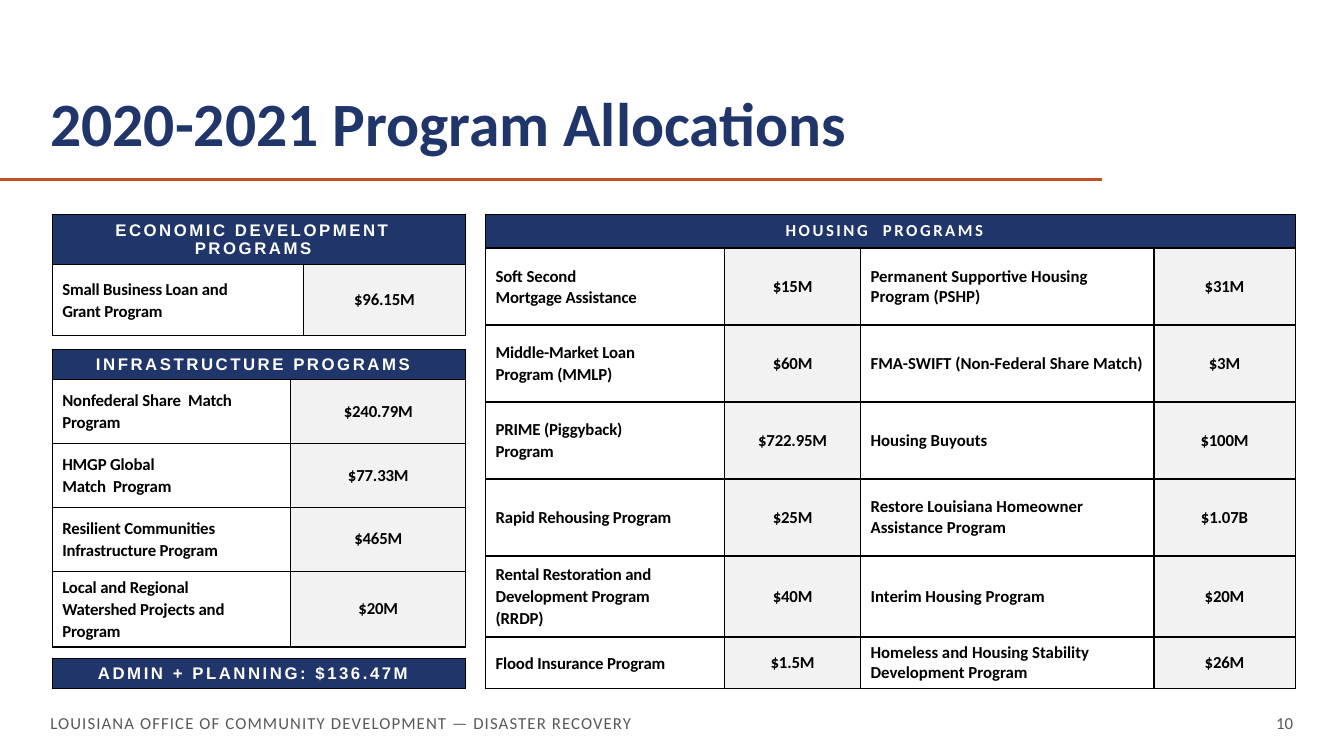
from copy import deepcopy

from lxml import etree
from pptx import Presentation
from pptx.dml.color import RGBColor
from pptx.enum.shapes import MSO_CONNECTOR
from pptx.enum.text import MSO_ANCHOR, PP_ALIGN
from pptx.oxml import parse_xml
from pptx.oxml.ns import nsdecls, qn
from pptx.util import Cm, Pt

NAVY = RGBColor(0x20, 0x35, 0x69)
RUST = RGBColor(0xC4, 0x4F, 0x27)
GRAY = RGBColor(0x59, 0x59, 0x59)
LIGHT_GRAY = RGBColor(0xF2, 0xF2, 0xF2)
WHITE = RGBColor(0xFF, 0xFF, 0xFF)
BLACK = RGBColor(0x00, 0x00, 0x00)
LEFT, CENTER, RIGHT = PP_ALIGN.LEFT, PP_ALIGN.CENTER, PP_ALIGN.RIGHT
MIDDLE, BOTTOM = MSO_ANCHOR.MIDDLE, MSO_ANCHOR.BOTTOM


def add_text(paragraph, text, size, color, bold, align, spacing=0, font_name="Calibri"):
    """Fill a paragraph line by line; spacing is in hundredths of a point."""
    paragraph.alignment = align
    for index, line in enumerate(text.split("\n")):
        if index:
            paragraph.add_line_break()
        run = paragraph.add_run()
        run.text = line
        run.font.name = font_name
        run.font.size = Pt(size)
        run.font.bold = bold
        run.font.color.rgb = color
        run.font._element.set("spc", str(spacing))
    for line_break in paragraph._p.findall(qn("a:br")):
        line_break.append(deepcopy(run.font._element))


def style_cell(cell, fill, margin_right):
    """Give a cell its fill, margins and thin black borders."""
    cell.fill.solid()
    cell.fill.fore_color.rgb = fill
    cell.vertical_anchor = MIDDLE
    cell.margin_left = Cm(0.25)
    cell.margin_right = Cm(margin_right)
    properties = cell._tc.get_or_add_tcPr()
    for index, side in enumerate(("lnL", "lnR", "lnT", "lnB")):
        border = parse_xml(
            f'<a:{side} {nsdecls("a")} w="12700"><a:solidFill>'
            f'<a:srgbClr val="{BLACK}"/></a:solidFill></a:{side}>'
        )
        properties.insert(index, border)


presentation = Presentation()
presentation.slide_width = Cm(33.87)
presentation.slide_height = Cm(19.05)
slide = presentation.slides.add_slide(presentation.slide_layouts[6])

title_rule = slide.shapes.add_connector(
    MSO_CONNECTOR.STRAIGHT, Cm(0), Cm(4.53), Cm(27.76), Cm(4.53)
)
title_rule.line.color.rgb = RUST
title_rule.line.width = Pt(2.25)
etree.SubElement(title_rule._element.spPr, qn("a:effectLst"))

# text, left, top, width, height, size, colour, bold, align, anchor, spacing
text_boxes = [
    ("2020-2021 Program Allocations", 1.27, 1.12, 26.49, 2.92,
     44, NAVY, True, LEFT, BOTTOM, 0),
    ("LOUISIANA OFFICE OF COMMUNITY DEVELOPMENT — DISASTER RECOVERY",
     1.27, 17.78, 16.94, 0.89, 12, GRAY, False, LEFT, MIDDLE, 80),
    ("10", 24.97, 17.78, 7.62, 0.89, 12, GRAY, False, RIGHT, MIDDLE, 0),
]
for text, left, top, width, height, size, color, bold, align, anchor, spacing in text_boxes:
    box = slide.shapes.add_textbox(Cm(left), Cm(top), Cm(width), Cm(height))
    frame = box.text_frame
    frame.word_wrap = True
    frame.vertical_anchor = anchor
    frame.margin_left = frame.margin_right = frame.margin_top = frame.margin_bottom = 0
    add_text(frame.paragraphs[0], text, size, color, bold, align, spacing)
    if size == 44:
        frame.paragraphs[0].line_spacing = 0.9

housing_rows = [
    ("Soft Second \nMortgage Assistance", "$15M",
     "Permanent Supportive Housing Program (PSHP)", "$31M"),
    ("Middle-Market Loan Program (MMLP)", "$60M",
     "FMA-SWIFT (Non-Federal Share Match)", "$3M"),
    ("PRIME (Piggyback) Program", "$722.95M", "Housing Buyouts", "$100M"),
    ("Rapid Rehousing Program", "$25M",
     "Restore Louisiana Homeowner Assistance Program", "$1.07B"),
    ("Rental Restoration and Development Program (RRDP)", "$40M",
     "Interim Housing Program", "$20M"),
    ("Flood Insurance Program", "$1.5M",
     "Homeless and Housing Stability Development Program", "$26M"),
]
infrastructure_rows = [
    ("Nonfederal Share  Match Program", "$240.79M"),
    ("HMGP Global \nMatch  Program", "$77.33M"),
    ("Resilient Communities Infrastructure Program", "$465M"),
    ("Local and Regional Watershed Projects and Program", "$20M"),
]
economic_rows = [("Small Business Loan and Grant Program", "$96.15M")]

# heading, heading font, left, top, column widths, row heights, rows
tables = [
    ("HOUSING  PROGRAMS", "Calibri", 12.24, 5.4, (6.02, 3.43, 7.39, 3.56),
     (0.85, 1.94, 1.94, 1.94, 1.94, 2.04, 1.3), housing_rows),
    ("INFRASTRUCTURE PROGRAMS", "Arial", 1.32, 8.8, (6.01, 4.41),
     (0.76, 1.61, 1.61, 1.61, 1.91), infrastructure_rows),
    ("ECONOMIC DEVELOPMENT PROGRAMS", "Arial", 1.32, 5.4, (6.32, 4.1),
     (1.21, 1.78), economic_rows),
    ("ADMIN + PLANNING: $136.47M", "Arial", 1.32, 16.59, (10.42,), (0.75,), []),
]
for heading, heading_font, left, top, widths, heights, rows in tables:
    table = slide.shapes.add_table(
        len(heights), len(widths), Cm(left), Cm(top), Cm(sum(widths)), Cm(sum(heights))
    ).table
    for column, width in zip(table.columns, widths):
        column.width = Cm(width)
    for row, height in zip(table.rows, heights):
        row.height = Cm(height)

    for column_index in range(len(widths)):
        style_cell(table.cell(0, column_index), NAVY, 0.55)
    heading_cell = table.cell(0, 0)
    if len(widths) > 1:
        heading_cell.merge(table.cell(0, len(widths) - 1))
    add_text(heading_cell.text_frame.paragraphs[0], heading, 12, WHITE, True,
             CENTER, 180, heading_font)

    for row_index, values in enumerate(rows, start=1):
        for column_index, value in enumerate(values):
            cell = table.cell(row_index, column_index)
            paragraph = cell.text_frame.paragraphs[0]
            if column_index % 2:
                style_cell(cell, LIGHT_GRAY, 0.25)
                add_text(paragraph, value, 12, BLACK, True, CENTER, -10)
            elif column_index == 0:
                style_cell(cell, WHITE, 1.14)
                add_text(paragraph, value, 12, BLACK, True, LEFT, -10)
                paragraph.line_spacing = 1.07
            else:
                style_cell(cell, WHITE, 0.2)
                add_text(paragraph, value, 12, BLACK, True, LEFT)

presentation.save("out.pptx")
